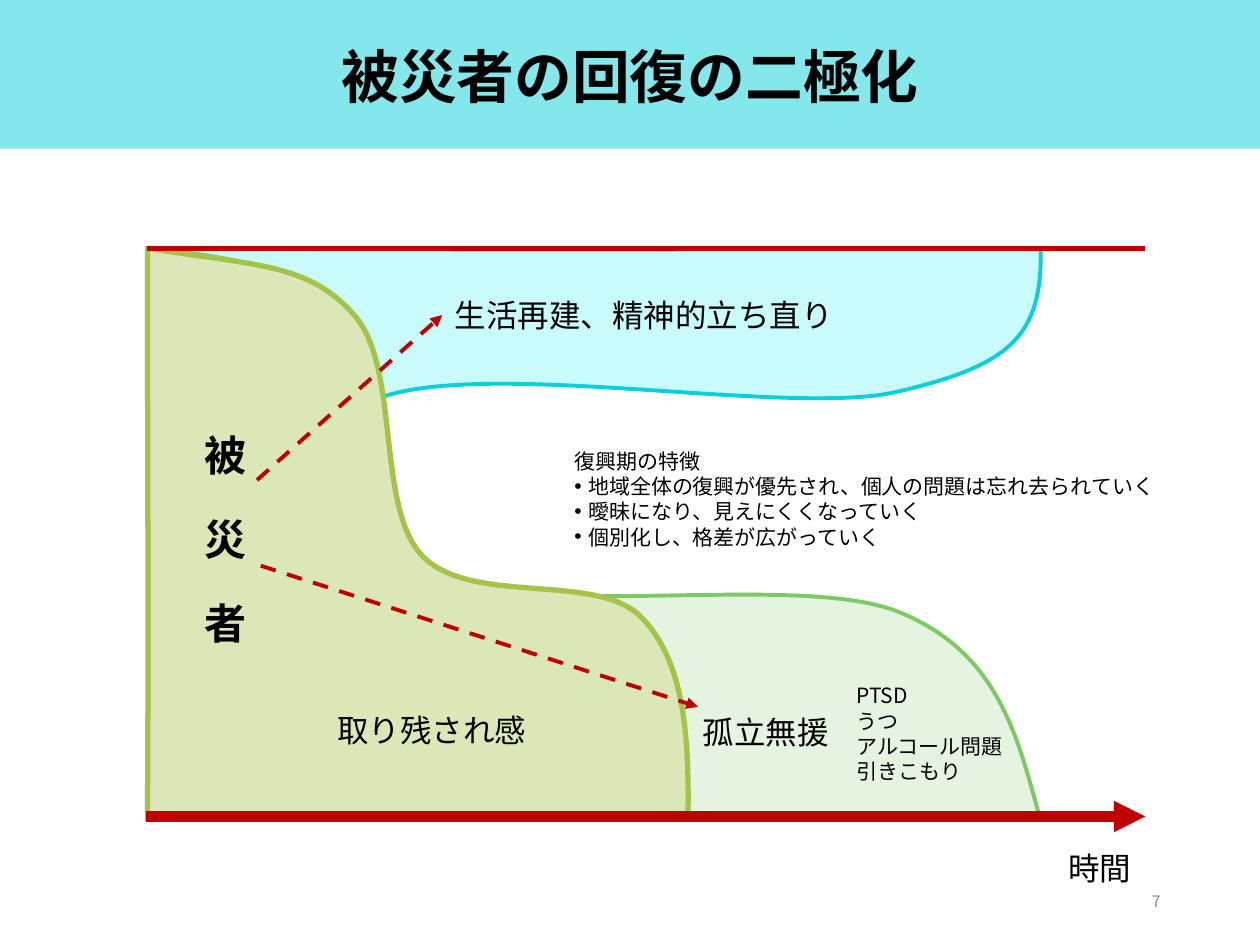
from dataclasses import dataclass
from typing import Optional

import pptx
import pptx.util
import pptx.dml.color
import pptx.enum.dml
import pptx.enum.shapes
import pptx.enum.text
import pptx.oxml
import pptx.oxml.ns
from pptx.util import Inches

FONT = "Noto Sans CJK JP"
COLORS = {
    "black": "000000", "grey": "8C8C8C", "red": "C00000", "header": "0BD0D9",
    "recovery": "C9FAFC", "recovery_edge": "0BD0D9",
    "isolation": "E5F4E0", "isolation_edge": "7CCA62",
    "victims": "DBE7B6", "victims_edge": "A5C249",
}
ALIGN = pptx.enum.text.PP_ALIGN
ANCHOR = pptx.enum.text.MSO_ANCHOR
AUTO_SIZE = pptx.enum.text.MSO_AUTO_SIZE


@dataclass
class Region:
    name: str
    line_pt: float
    start: tuple
    curves: list  # each: two control points and an end point


@dataclass
class Line:
    start: tuple
    end: tuple
    width_pt: float
    dashed: bool = False
    arrow: bool = True


@dataclass
class Label:
    box: tuple  # left, top, width, height
    lines: list
    size: float = 18
    color: str = "black"
    bold: bool = False
    align: Optional[ALIGN] = None
    anchor: ANCHOR = ANCHOR.TOP
    spacing: Optional[float] = None
    wrap: bool = False
    vertical: bool = False
    bulleted: bool = False  # bullets on every line after the first


REGIONS = [
    Region("recovery", 2.25, (1.19, 6.5), [
        (2.62, 6.36, 2.5, 6.25, 2.78, 5.71),
        (3.06, 5.16, 2.16, 3.65, 2.88, 3.22),
        (3.6, 2.79, 6.22, 3.32, 7.12, 3.11),
        (8.02, 2.9, 8.27, 2.67, 8.26, 1.98),
        (8.26, 1.97, 3.54, 1.99, 1.19, 1.97),
        (1.19, 3.48, 1.18, 4.99, 1.19, 6.5)]),
    Region("isolation", 2.25, (1.17, 1.97), [
        (2.6, 2.11, 2.37, 2.33, 2.77, 2.76),
        (3.17, 3.2, 2.85, 4.22, 3.57, 4.57),
        (4.3, 4.92, 6.36, 4.54, 7.14, 4.86),
        (7.92, 5.18, 8.07, 5.83, 8.25, 6.48),
        (8.26, 6.51, 3.53, 6.48, 1.17, 6.5),
        (1.18, 4.99, 1.17, 3.48, 1.17, 1.97)]),
    Region("victims", 3, (1.17, 1.97), [
        (2.04, 2.11, 2.45, 2.09, 2.81, 2.5),
        (3.18, 2.91, 2.98, 4.02, 3.35, 4.41),
        (3.73, 4.81, 4.72, 4.54, 5.08, 4.89),
        (5.43, 5.23, 5.47, 5.84, 5.46, 6.48),
        (5.46, 6.52, 2.6, 6.48, 1.17, 6.5),
        (1.18, 4.99, 1.17, 3.48, 1.17, 1.97)]),
]

AXES = [
    Line((1.16, 6.48), (9.09, 6.48), 6),
    Line((1.17, 1.97), (9.09, 1.97), 3, arrow=False),
]
PATHWAYS = [
    Line((2.04, 3.81), (3.51, 2.5), 2.25, dashed=True),
    Line((2.07, 4.49), (5.54, 5.61), 2.25, dashed=True),
]

LABELS = [
    Label((0.69, 0.21, 8.62, 0.85), ["被災者の回復の二極化"], 33, bold=True,
          align=ALIGN.CENTER, anchor=ANCHOR.MIDDLE, spacing=0.9, wrap=True),
    Label((1.42, 3.35, 0.61, 1.78), ["被　災　者"], 24, bold=True, vertical=True),
    Label((8.38, 6.69, 0.71, 0.4), ["時間"]),
    Label((2.58, 5.59, 1.72, 0.4), ["取り残され感"]),
    Label((5.48, 5.61, 1.21, 0.4), ["孤立無援"]),
    Label((6.7, 5.37, 1.38, 0.91), ["PTSD", "うつ", "アルコール問題", "引きこもり"], 12),
    Label((3.51, 2.3, 3.32, 0.4), ["生活再建、精神的立ち直り"]),
    Label((4.46, 3.51, 4.86, 0.91), [
        "復興期の特徴",
        "地域全体の復興が優先され、個人の問題は忘れ去られていく",
        "曖昧になり、見えにくくなっていく",
        "個別化し、格差が広がっていく"], 12, bulleted=True),
    Label((7.06, 6.95, 2.25, 0.4), ["7"], 9, "grey", align=ALIGN.RIGHT,
          anchor=ANCHOR.MIDDLE, wrap=True),
]


def rgb(name: str) -> pptx.dml.color.RGBColor:
    return pptx.dml.color.RGBColor.from_string(COLORS[name])


def add_xml(parent, tag: str, **attrs: str):
    child = pptx.oxml.parse_xml(f"<a:{tag} {pptx.oxml.ns.nsdecls('a')}/>")
    for key, value in attrs.items():
        child.set(key, value)
    parent.append(child)
    return child


def draw_header(s) -> None:
    sp = s.shapes.add_shape(pptx.enum.shapes.MSO_SHAPE.RECTANGLE,
                            0, 0, Inches(10), Inches(1.18))
    sp.shadow.inherit = False
    sp.fill.solid()
    sp.fill.fore_color.rgb = rgb("header")
    color = sp._element.spPr.find(".//" + pptx.oxml.ns.qn("a:srgbClr"))
    add_xml(color, "alpha", val="50000")
    sp.line.fill.background()


def draw_region(s, region: Region) -> None:
    builder = s.shapes.build_freeform(*map(Inches, region.start))
    builder.add_line_segments(
        [tuple(map(Inches, curve[4:])) for curve in region.curves], close=True)
    sp = builder.convert_to_shape()
    # Bend each straight segment into its cubic curve
    segments = list(sp._element.iter(pptx.oxml.ns.qn("a:lnTo")))
    for segment, curve in zip(segments, region.curves):
        outline = segment.getparent()
        bend = add_xml(outline, "cubicBezTo")
        for x, y in zip(curve[::2], curve[1::2]):
            add_xml(bend, "pt", x=str(Inches(x) - sp.left), y=str(Inches(y) - sp.top))
        outline.replace(segment, bend)
    sp.shadow.inherit = False
    sp.fill.solid()
    sp.fill.fore_color.rgb = rgb(region.name)
    sp.line.color.rgb = rgb(region.name + "_edge")
    sp.line.width = pptx.util.Pt(region.line_pt)


def draw_line(s, line: Line) -> None:
    sp = s.shapes.add_connector(pptx.enum.shapes.MSO_CONNECTOR.STRAIGHT,
                                *map(Inches, line.start + line.end))
    sp.line.color.rgb = rgb("red")
    sp.line.width = pptx.util.Pt(line.width_pt)
    if line.dashed:
        sp.line.dash_style = pptx.enum.dml.MSO_LINE.DASH
    if line.arrow:
        ln = sp._element.spPr.find(pptx.oxml.ns.qn("a:ln"))
        add_xml(ln, "tailEnd", type="triangle")
    add_xml(sp._element.spPr, "effectLst")


def draw_label(s, label: Label) -> None:
    tf = s.shapes.add_textbox(*map(Inches, label.box)).text_frame
    tf.word_wrap = label.wrap
    tf.auto_size = AUTO_SIZE.NONE if label.wrap else AUTO_SIZE.SHAPE_TO_FIT_TEXT
    tf.vertical_anchor = label.anchor
    if label.vertical:
        tf._txBody.bodyPr.set("vert", "eaVert")
    for i, text in enumerate(label.lines):
        p = tf.add_paragraph() if i else tf.paragraphs[0]
        p.alignment = label.align
        p.line_spacing = label.spacing
        if label.bulleted and i:
            pPr = p._p.get_or_add_pPr()
            pPr.set("marL", str(Inches(0.11)))
            pPr.set("indent", str(Inches(-0.11)))
            add_xml(pPr, "buFont", typeface="Arial")
            add_xml(pPr, "buChar", char="•")
        r = p.add_run()
        r.text = text
        r.font.size = pptx.util.Pt(label.size)
        r.font.bold = label.bold
        r.font.color.rgb = rgb(label.color)
        r.font.name = FONT
        add_xml(r._r.get_or_add_rPr(), "ea", typeface=FONT)


def main() -> None:
    prs = pptx.Presentation()
    prs.slide_width, prs.slide_height = Inches(10), Inches(7.5)
    s = prs.slides.add_slide(prs.slide_layouts[6])

    draw_header(s)
    # Overlapping regions, back to front
    for region in REGIONS:
        draw_region(s, region)
    # Time axis, upper bound and the two pathways
    for line in AXES + PATHWAYS:
        draw_line(s, line)
    # Title, labels and page number
    for label in LABELS:
        draw_label(s, label)
    prs.save("out.pptx")


if __name__ == "__main__":
    main()
